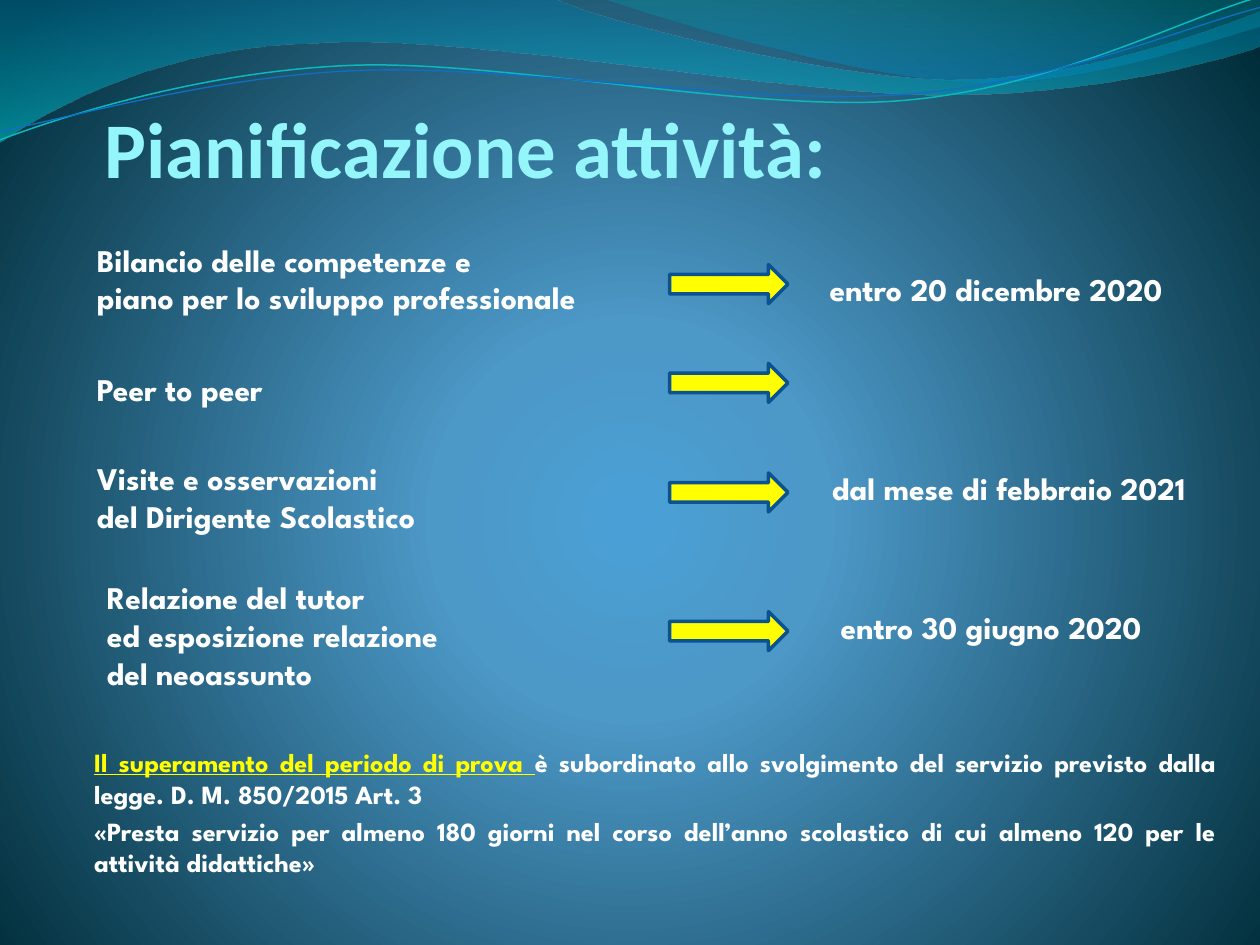
from math import cos, radians, sin

from lxml.etree import SubElement
from pptx import Presentation
from pptx.dml.color import RGBColor as RGB
from pptx.enum.shapes import MSO_SHAPE as Shape
from pptx.enum.text import MSO_ANCHOR as Anchor, MSO_AUTO_SIZE as Auto, PP_ALIGN as Align
from pptx.oxml import parse_xml
from pptx.oxml.ns import nsdecls, qn
from pptx.util import Inches, Pt

# Grid: 100 columns by 75 rows
COLS, ROWS = 100, 75
UNIT = Inches(0.1)
FONT = "League Spartan"
HEX = {
    "white": "FFFFFF", "yellow": "FFFF00", "title": "94F5FA", "edge": "0B5292",
    "glow": "4AA0D6", "mid": "4C98C7", "dark": "002C38",
    "blue": "0074A1", "teal": "00C6CF", "sea": "00A1A9", "sky": "008BBF",
    "cyan": "0AB8BF", "line": "0F6FC6",
}
DOWN = '<a:lin ang="5400000" scaled="0"/>'
ROUND = ('<a:path path="circle"><a:fillToRect l="10000" t="110000" '
         'r="10000" b="100000"/></a:path>')


def color(name):
    return RGB.from_string(HEX[name])


def place(item, box):
    item.left, item.top, item.width, item.height = [int(n * UNIT) for n in box]


def stop(pos, name, alpha=None):
    veil = f'<a:alpha val="{alpha * 1000}"/>' if alpha else ""
    return (f'<a:gs pos="{pos * 1000}"><a:srgbClr val="{HEX[name]}">'
            f'{veil}</a:srgbClr></a:gs>')


def grad(fill, root, stops, kind):
    """Swap the solid fill below root for a gradient of (pos, colour, opacity)."""
    fill.solid()
    marks = "".join(stop(*part) for part in stops)
    new = parse_xml(f'<a:gradFill {nsdecls("a")} rotWithShape="1">'
                    f'<a:gsLst>{marks}</a:gsLst>{kind}</a:gradFill>')
    old = next(root.iter(qn("a:solidFill")))
    old.getparent().replace(old, new)


def write(frame, paras, size=18, font=FONT, align=Align.LEFT, tint="white",
          anchor=Anchor.TOP, pad=(0.1, 0.05, 0.1, 0.05), gap=0, right=0):
    """Fill a frame; a paragraph is a list of (text, colour, underline) or a string."""
    frame.word_wrap, frame.auto_size = True, Auto.NONE
    frame.vertical_anchor = anchor
    (frame.margin_left, frame.margin_top,
     frame.margin_right, frame.margin_bottom) = map(Inches, pad)
    for i, parts in enumerate(paras):
        para = frame.add_paragraph() if i else frame.paragraphs[0]
        para.alignment, para.space_before = align, Pt(gap)
        if right:
            para._p.get_or_add_pPr().set("marR", str(Inches(right)))
        if isinstance(parts, str):
            parts = [(parts, tint, False)]
        for text, name, under in parts:
            run = para.add_run()
            run.text = text
            face = run.font
            face.name, face.size, face.bold = font, Pt(size), True
            face.color.rgb = color(name)
            if under:
                face.underline = True
                ink = parse_xml(f'<a:uFill {nsdecls("a")}><a:solidFill><a:srgbClr '
                                f'val="{HEX[name]}"/></a:solidFill></a:uFill>')
                run._r.rPr.find(qn("a:latin")).addprevious(ink)


def bend(item, steps):
    """Join each three segments of a cubic step into one curve."""
    segs = iter(list(item._element.iter(qn("a:lnTo"))))
    for step in steps:
        first = next(segs)
        if len(step) == 6:
            curve = SubElement(first.getparent(), qn("a:cubicBezTo"))
            first.addprevious(curve)
            for seg in (first, next(segs), next(segs)):
                curve.append(seg[0])
                seg.getparent().remove(seg)


def wave(slide, start, steps, stops=None, line=None, width=0.75, turn=0, mid=(0, 0)):
    """Draw lines (2 numbers) and cubic curves (6 numbers), in inches."""
    flat = [*start, *(n for step in steps for n in step)]
    c, s = cos(radians(turn)), sin(radians(turn))
    dots = [(1000 * (mid[0] + (x - mid[0]) * c + (y - mid[1]) * s),
             1000 * (mid[1] - (x - mid[0]) * s + (y - mid[1]) * c))
            for x, y in zip(flat[::2], flat[1::2])]
    pen = slide.shapes.build_freeform(*dots[0], scale=Inches(1) / 1000)
    pen.add_line_segments(dots[1:], close=bool(stops))
    item = pen.convert_to_shape()
    bend(item, steps)
    item.rotation = turn % 360
    item.shadow.inherit = False
    if stops:
        grad(item.fill, item._element.spPr, stops, DOWN)
        item.line.fill.background()
    else:
        item.fill.background()
        item.line.color.rgb = color(line)
        item.line.width = Pt(width)


def scene(slide):
    # Background glow
    grad(slide.background.fill, slide._element.cSld,
         [(0, "glow"), (25, "mid"), (100, "dark")], ROUND)
    # Wide and right-hand bands
    wave(slide, (0, 0), [
        (4.4, -0.01), (4.76, 0.17, 6.64, 0.63, 7.58, 0.63),
        (8.53, 0.63, 9.58, 0.26, 10, 0.09), (10.01, 0.36),
        (9.83, 0.44, 8.7, 0.76, 7.46, 0.75), (6.22, 0.75, 3.82, 0.28, 2.57, 0.34),
        (1.29, 0.36, 0.46, 0.83, -0.01, 1.13)],
        stops=[(0, "blue", 45), (100, "teal", 55)])
    wave(slide, (4.79, -0.01), [
        (5.09, 0.11, 6.82, 0.62, 7.69, 0.65),
        (8.56, 0.69, 9.61, 0.32, 10, 0.21), (10, 0)],
        stops=[(0, "sea", 30), (80, "sky", 45)])
    # Thin strands
    wave(slide, (0, 1.11), [
        (0.48, 0.93, 1.58, 0.57, 2.77, 0.52), (3.95, 0.47, 5.93, 0.89, 7.13, 0.8),
        (8.33, 0.71, 9.38, 0.15, 9.98, -0.02)],
        line="cyan", width=0.85, turn=-2.7, mid=(4.99, 0.58))
    wave(slide, (0, 1.04), [
        (0.47, 0.96, 1.64, 0.61, 2.83, 0.56), (4.03, 0.51, 5.97, 0.84, 7.17, 0.75),
        (8.36, 0.67, 9.41, 0.21, 10, 0.06)],
        line="line", turn=-2.7, mid=(5, 0.59))


def head(slide, box):
    title = slide.shapes.title
    place(title, box)
    write(title.text_frame, ["Pianificazione attività:"], size=45, font="Calibri",
          tint="title", anchor=Anchor.BOTTOM, pad=(0, 0, 0, 0))


def label(slide, lines, box):
    item = slide.shapes.add_textbox(0, 0, 0, 0)
    place(item, box)
    write(item.text_frame, lines)


def task(slide, box, lines, drop, date=None, spot=None):
    """One activity: text in box, arrow drop rows below its top, date at spot."""
    label(slide, lines, box)
    item = slide.shapes.add_shape(Shape.RIGHT_ARROW, 0, 0, 0, 0)
    place(item, (53.14, box[1] + drop, 9.4, 3.1))
    item.shadow.inherit = False
    item.fill.solid()
    item.fill.fore_color.rgb = color("yellow")
    item.line.color.rgb = color("edge")
    item.line.width = Pt(2)
    if date:
        x, down, wide = spot
        label(slide, [date], (x, box[1] + down, wide, 4))


def note(slide, box):
    body = slide.placeholders[1]
    place(body, box)
    write(body.text_frame, [
        [("Il superamento del periodo di prova ", "yellow", True),
         ("è subordinato allo svolgimento del servizio previsto dalla legge. "
          "D. M. 850/2015 Art. 3", "white", False)],
        "«Presta servizio per almeno 180 giorni nel corso dell’anno scolastico "
        "di cui almeno 120 per le attività didattiche»"],
        size=15, align=Align.JUSTIFY, pad=(0, 0.05, 0.02, 0.05), gap=3, right=0.05)


def main():
    deck = Presentation()
    deck.slide_width, deck.slide_height = COLS * UNIT, ROWS * UNIT
    slide = deck.slides.add_slide(deck.slide_layouts[0])
    scene(slide)
    note(slide, (7.46, 58.75, 89.8, 13.2))
    head(slide, (8.3, 10.7, 85, 4.7))
    # Activities
    task(slide, (6.7, 18.6, 46, 7.1),
         ["Bilancio delle competenze e", "piano per lo sviluppo professionale"],
         2.4, " entro 20 dicembre 2020", (64.2, 2.35, 31.6))
    task(slide, (6.7, 28.84, 24.4, 4), ["Peer to peer"], 0)
    task(slide, (6.7, 35.93, 33.1, 7.1), ["Visite e osservazioni", "del Dirigente Scolastico"],
         1.6, " dal mese di febbraio 2021", (64.4, 0.8, 34.5))
    task(slide, (7.5, 45.4, 40.2, 10.1),
         ["Relazione del tutor", "ed esposizione relazione", "del neoassunto"],
         3.14, "entro 30 giugno 2020", (65.74, 2.35, 28.2))
    deck.save("out.pptx")


if __name__ == "__main__":
    main()
